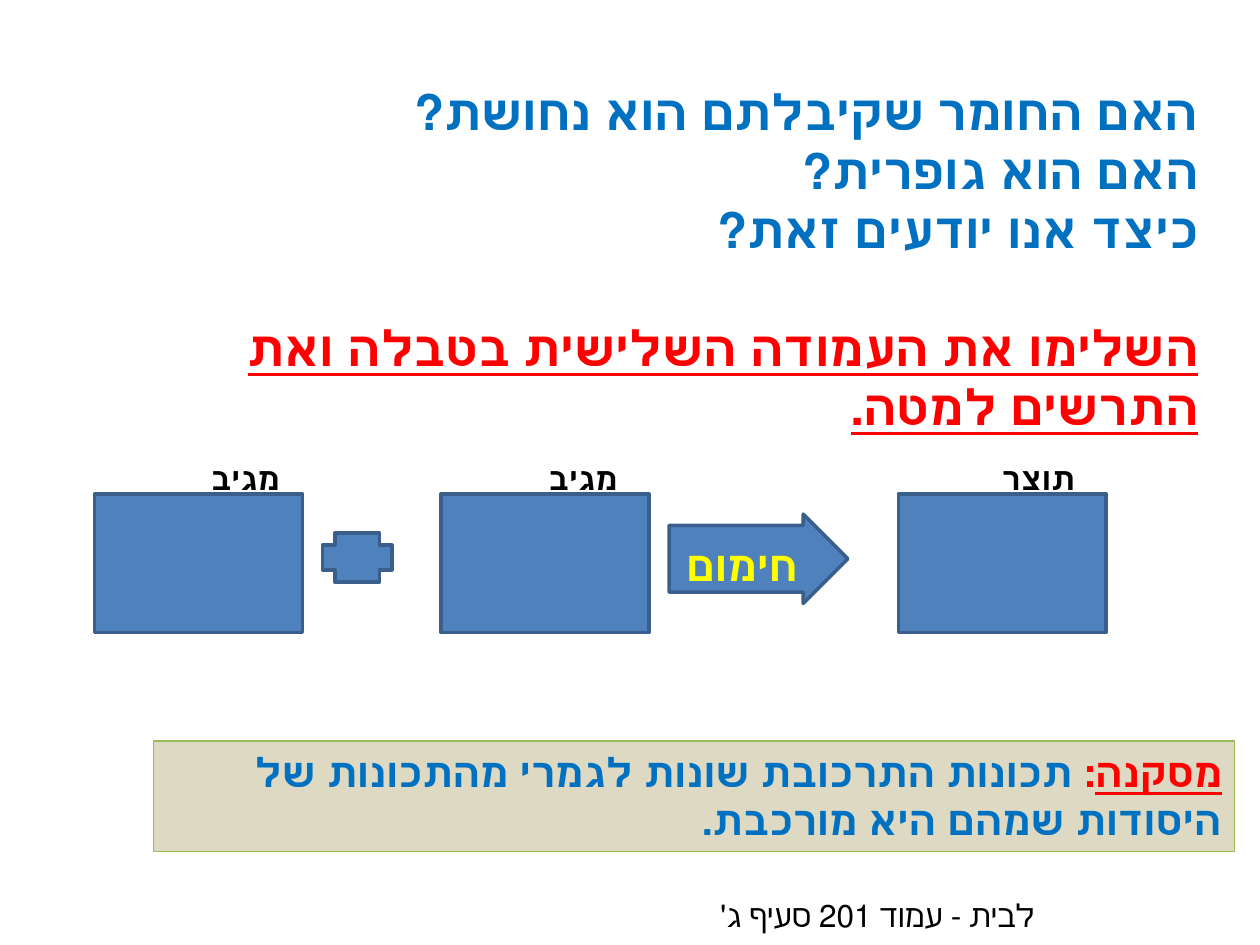
from pptx import Presentation
from pptx.dml.color import RGBColor
from pptx.enum.shapes import MSO_SHAPE
from pptx.enum.text import MSO_ANCHOR, PP_ALIGN
from pptx.util import Inches, Pt

RECTANGLE, PLUS, ARROW = MSO_SHAPE.RECTANGLE, MSO_SHAPE.CROSS, MSO_SHAPE.RIGHT_ARROW
RIGHT, CENTER = PP_ALIGN.RIGHT, PP_ALIGN.CENTER
TOP, MIDDLE = MSO_ANCHOR.TOP, MSO_ANCHOR.MIDDLE

BLUE, RED, BLACK, YELLOW = "0070C0", "FF0000", "000000", "FFFF00"
SHAPE_FILL, SHAPE_LINE = "4F81BD", "3A5F8C"
CONCLUSION_FILL, CONCLUSION_LINE = "DDD9C3", "9BBB59"

# Each paragraph is a list of runs: (text, colour, underlined)
QUESTIONS = [
    [("האם החומר שקיבלתם הוא נחושת?", BLUE, False)],
    [("האם הוא גופרית?", BLUE, False)],
    [("כיצד אנו יודעים זאת?", BLUE, False)],
    [("השלימו את העמודה השלישית בטבלה ואת התרשים למטה.", RED, True)],
]
CONCLUSION = [[
    ("מסקנה", RED, True),
    (": ", RED, False),
    ("תכונות התרכובת שונות לגמרי מהתכונות של היסודות שמהם היא מורכבת.", BLUE, False),
]]
HEATING = [[("חימום", YELLOW, False)]]
HOMEWORK = [[("לבית - עמוד 201 סעיף ג'", BLACK, False)]]

BOX_TOP, BOX_WIDTH, BOX_HEIGHT = 3.92, 1.65, 1.1
LABEL_TOP, LABEL_HEIGHT = 3.59, 0.4
# label, box left, label left, label width
SUBSTANCES = [
    ("מגיב", 0.75, 0.51, 1.81),
    ("מגיב", 3.5, 3.19, 1.81),
    ("תוצר", 7.13, 7.13, 1.5),
]


def color(hex_string):
    return RGBColor.from_string(hex_string)


def write(shape, paragraphs, size, font="Calibri", bold=True, align=RIGHT, anchor=TOP):
    """Fill a shape with right-to-left paragraphs."""
    frame = shape.text_frame
    frame.word_wrap = True
    frame.vertical_anchor = anchor
    for index, runs in enumerate(paragraphs):
        paragraph = frame.add_paragraph() if index else frame.paragraphs[0]
        paragraph.alignment = align
        paragraph._p.get_or_add_pPr().set("rtl", "1")
        for text, hex_string, underlined in runs:
            run = paragraph.add_run()
            run.text = text
            run.font.name = font
            run.font.size = Pt(size)
            run.font.bold = bold
            run.font.underline = underlined
            run.font.color.rgb = color(hex_string)


def add_text(slide, box, paragraphs, size, **style):
    shape = slide.shapes.add_textbox(*map(Inches, box))
    write(shape, paragraphs, size, **style)
    return shape


def add_block(slide, kind, box, fill=SHAPE_FILL, line=SHAPE_LINE, line_width=2):
    shape = slide.shapes.add_shape(kind, *map(Inches, box))
    shape.shadow.inherit = False
    shape.fill.solid()
    shape.fill.fore_color.rgb = color(fill)
    shape.line.color.rgb = color(line)
    shape.line.width = Pt(line_width)
    return shape


def main():
    presentation = Presentation()
    presentation.slide_width, presentation.slide_height = Inches(10), Inches(7.5)
    slide = presentation.slides.add_slide(presentation.slide_layouts[6])

    questions = add_text(slide, (0.83, 0.6, 8.78, 2.46), QUESTIONS, 28, font="Cabin")
    questions.text_frame.paragraphs[-1].space_before = Pt(34)

    for label, box_left, label_left, label_width in SUBSTANCES:
        add_block(slide, RECTANGLE, (box_left, BOX_TOP, BOX_WIDTH, BOX_HEIGHT))
        add_text(slide, (label_left, LABEL_TOP, label_width, LABEL_HEIGHT),
                 [[(label, BLACK, False)]], 18)

    add_block(slide, PLUS, (2.56, 4.23, 0.55, 0.39))
    arrow = add_block(slide, ARROW, (5.31, 4.08, 1.42, 0.71))
    arrow.adjustments[0], arrow.adjustments[1] = 0.745, 0.5
    write(arrow, HEATING, 24, align=CENTER, anchor=MIDDLE)
    arrow.text_frame.margin_top, arrow.text_frame.margin_bottom = Inches(0.1), 0

    conclusion = add_block(slide, RECTANGLE, (1.22, 5.88, 8.58, 0.88),
                           CONCLUSION_FILL, CONCLUSION_LINE, 0.75)
    write(conclusion, CONCLUSION, 23, font="Cabin")
    add_text(slide, (4.53, 7.06, 3.78, 0.4), HOMEWORK, 18, bold=False)

    presentation.save("out.pptx")


if __name__ == "__main__":
    main()
